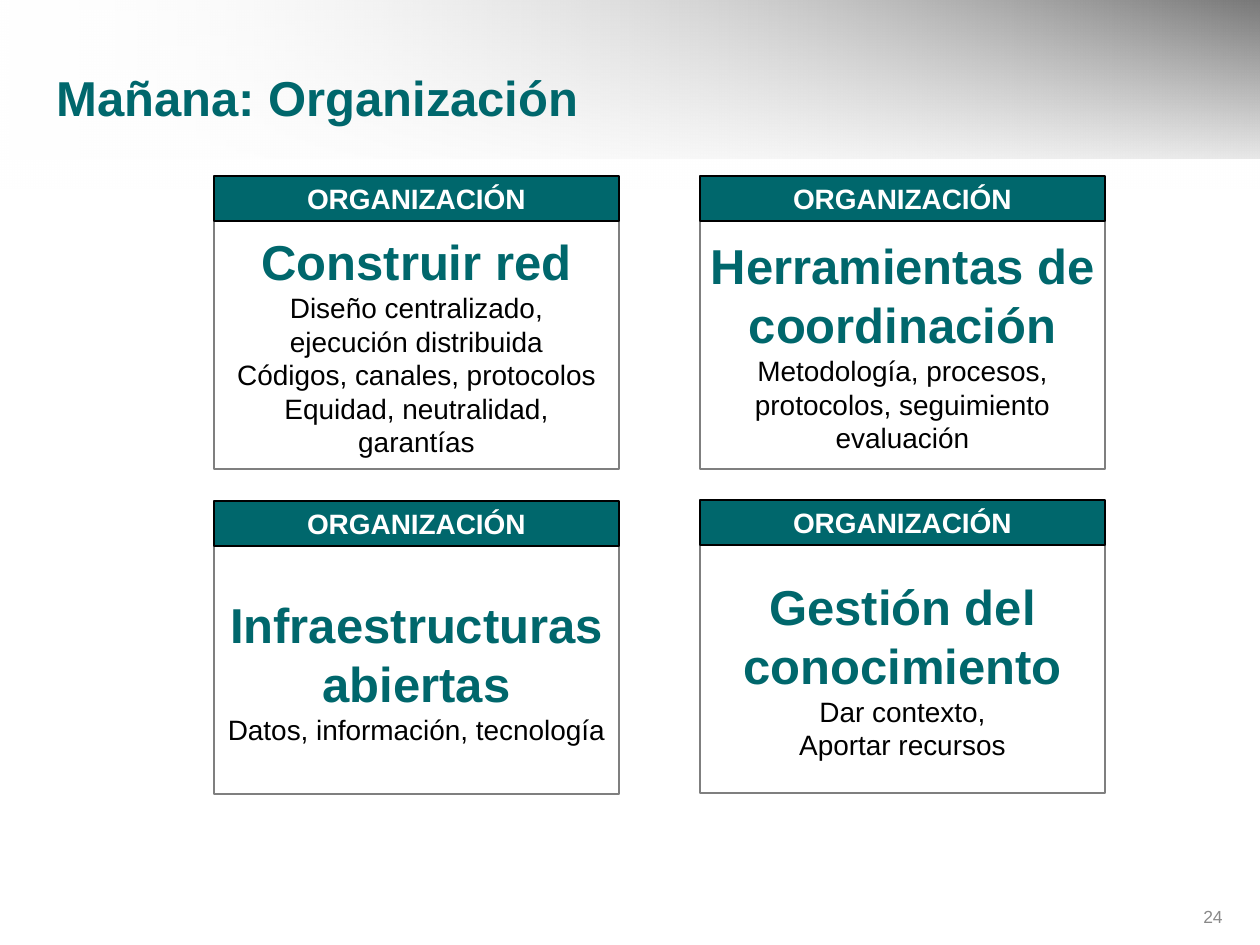
from lxml import etree
from pptx import Presentation, util as u
from pptx.dml.color import RGBColor
from pptx.enum import shapes, text
from pptx.oxml.ns import qn

# Content
TEAL, BLACK, WHITE, GRAY, PAGE_GRAY = "00676C", "000000", "FFFFFF", "7F7F7F", "898989"
TITLE = "Mañana: Organización"
PAGE_NUMBER = "24"
CARD_LABEL = "ORGANIZACIÓN"
CARDS = [  # left, top, side inset, heading, details
    (214, 176, 13, "Construir red",
     ["Diseño centralizado,", "ejecución distribuida",
      "Códigos, canales, protocolos Equidad, neutralidad, garantías"]),
    (214, 501, 13, "Infraestructuras abiertas", ["Datos, información, tecnología"]),
    (700, 500, 13, "Gestión del conocimiento", ["Dar contexto,", "Aportar recursos"]),
    (700, 176, 5, "Herramientas de coordinación",
     ["Metodología, procesos, protocolos, seguimiento evaluación"]),
]
CARD_WIDTH, LABEL_HEIGHT, BODY_HEIGHT = 405, 45, 248
BANDS = [  # height, angle, (colour, opacity in %) at each end
    (159, 0, [(WHITE, 0), (BLACK, 100)]),
    (189, 270, [(WHITE, 47), (WHITE, 100)]),
]


def px(length):
    return u.Emu(round(length * 914400 / 126))


def color(value):
    return RGBColor.from_string(value)


def add_box(left, top, width, height, fill=None, line=None):
    shape = slide.shapes.add_shape(shapes.MSO_SHAPE.RECTANGLE,
                                   *map(px, (left, top, width, height)))
    shape.shadow.inherit = False
    if fill:
        shape.fill.solid()
        shape.fill.fore_color.rgb = color(fill)
    if line:
        shape.line.color.rgb = color(line)
        shape.line.width = u.Pt(0)
    else:
        shape.line.fill.background()
    return shape


def add_text(frame, content, size, font_color, bold=False,
             align=text.PP_ALIGN.CENTER, first=True):
    paragraph = frame.paragraphs[0] if first else frame.add_paragraph()
    paragraph.alignment = align
    run = paragraph.add_run()
    run.text = content
    run.font.name, run.font.size, run.font.bold = "Arial", u.Pt(size), bold
    run.font.color.rgb = color(font_color)


def add_text_box(left, top, width, height, anchor, content, **style):
    frame = slide.shapes.add_textbox(*map(px, (left, top, width, height))).text_frame
    frame.word_wrap = True
    frame.vertical_anchor = anchor
    add_text(frame, content, **style)


def add_band(height, angle, stops):
    shape = add_box(0, 0, 1260, height)
    shape.fill.gradient()
    shape.fill.gradient_angle = angle
    for stop, (value, _) in zip(shape.fill.gradient_stops, stops):
        stop.color.rgb = color(value)
    for node, (_, opacity) in zip(shape._element.spPr.iter(qn("a:srgbClr")), stops):
        etree.SubElement(node, qn("a:alpha")).set("val", str(opacity * 1000))


def add_card(left, top, inset, heading, details):
    body = add_box(left, top + LABEL_HEIGHT, CARD_WIDTH, BODY_HEIGHT, WHITE, GRAY).text_frame
    body.word_wrap = True
    body.vertical_anchor = text.MSO_ANCHOR.MIDDLE
    body.margin_left = body.margin_right = px(inset)
    add_text(body, heading, 28, TEAL, bold=True)
    for detail in details:
        add_text(body, detail, 16, BLACK, first=False)
    label = add_box(left, top, CARD_WIDTH, LABEL_HEIGHT, TEAL, BLACK).text_frame
    label.vertical_anchor = text.MSO_ANCHOR.MIDDLE
    add_text(label, CARD_LABEL, 16, WHITE, bold=True)


presentation = Presentation()
presentation.slide_width, presentation.slide_height = px(1260), px(945)
slide = presentation.slides.add_slide(presentation.slide_layouts[6])

# Shaded header
for band in BANDS:
    add_band(*band)

# Page number and title
add_text_box(1155, 900, 80, 36, text.MSO_ANCHOR.TOP, PAGE_NUMBER,
             size=10, font_color=PAGE_GRAY, align=text.PP_ALIGN.RIGHT)
add_text_box(44, 58, 1160, 78, text.MSO_ANCHOR.MIDDLE, TITLE,
             size=28, font_color=TEAL, bold=True, align=text.PP_ALIGN.LEFT)

# Cards
for card in CARDS:
    add_card(*card)

presentation.save("out.pptx")
